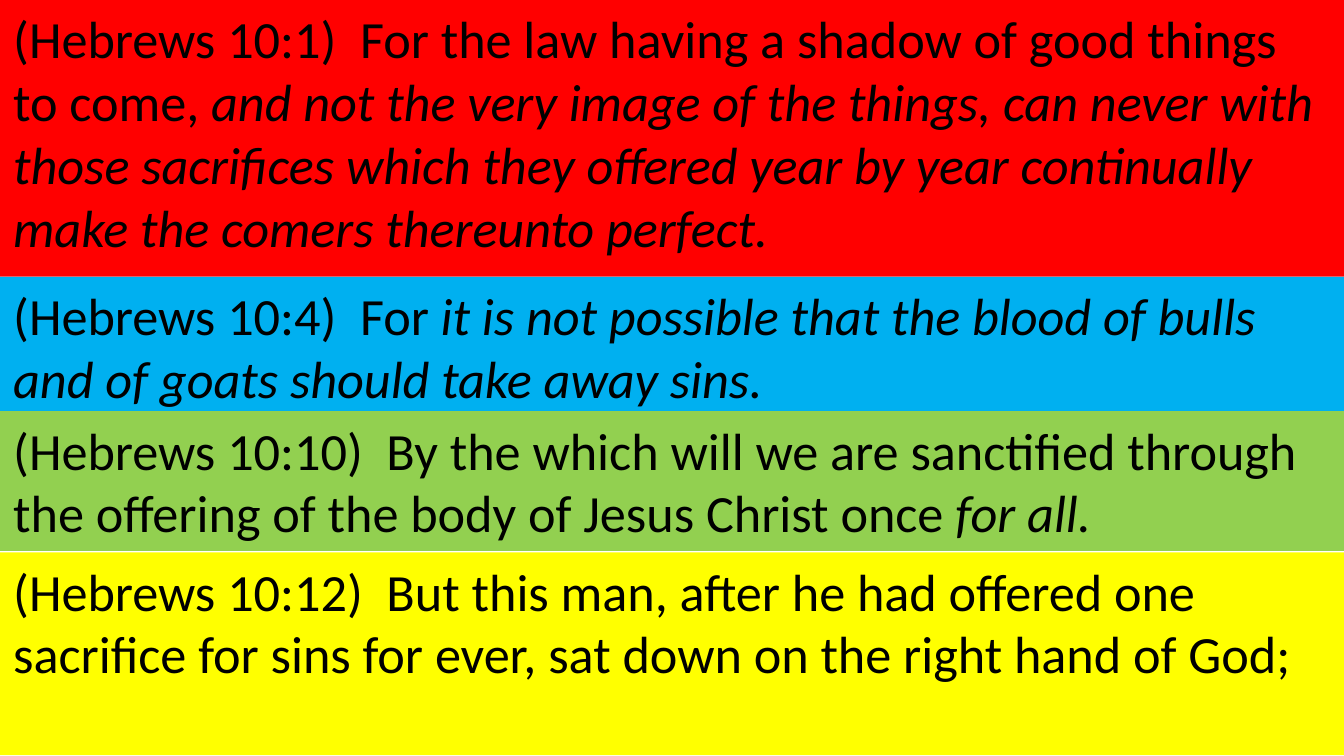
from pptx import Presentation
from pptx.dml.color import RGBColor
from pptx.enum.text import MSO_ANCHOR, MSO_AUTO_SIZE
from pptx.util import Inches, Pt

TOP = MSO_ANCHOR.TOP
NO_RESIZE = MSO_AUTO_SIZE.NONE
BLANK_LAYOUT = 6
SLIDE_WIDTH = 10
SLIDE_HEIGHT = SLIDE_WIDTH * 9 / 16

COLOURS = {
    "red": "FF0000",
    "blue": "00B0F0",
    "green": "92D050",
    "yellow": "FFFF00",
    "text": "000000",
}
FRAME_FORMAT = {"word_wrap": True, "auto_size": NO_RESIZE, "vertical_anchor": TOP}
FONT_FORMAT = {"name": "Calibri", "size": Pt(28)}

# Each verse: top, height, band colour, upright words, italic words
VERSES = [
    (0, 2.06, "red",
     "(Hebrews 10:1)  For the law having a shadow of good things to come, ",
     "and not the very image of the things, can never with those sacrifices "
     "which they offered year by year continually make the comers thereunto perfect."),
    (2.06, 1.04, "blue",
     "(Hebrews 10:4)  For ",
     "it is not possible that the blood of bulls and of goats should take away sins."),
    (3.06, 1.04, "green",
     "(Hebrews 10:10)  By the which will we are sanctified through the offering "
     "of the body of Jesus Christ once ",
     "for all."),
    (4.11, 1.51, "yellow",
     "(Hebrews 10:12)  But this man, after he had offered one sacrifice for sins "
     "for ever, sat down on the right hand of God;",
     ""),
]


def colour(name):
    return RGBColor.from_string(COLOURS[name])


def apply_format(target, values):
    for name, value in values.items():
        setattr(target, name, value)


def add_span(para, text, italic):
    span = para.add_run()
    span.text = text
    apply_format(span.font, {**FONT_FORMAT, "italic": italic})
    span.font.color.rgb = colour("text")


def add_verse(page, top, height, band, upright, italic):
    box = page.shapes.add_textbox(
        Inches(0), Inches(top), Inches(SLIDE_WIDTH), Inches(height))
    box.fill.solid()
    box.fill.fore_color.rgb = colour(band)
    apply_format(box.text_frame, FRAME_FORMAT)
    para = box.text_frame.paragraphs[0]
    add_span(para, upright, False)
    if italic:
        add_span(para, italic, True)


def main():
    deck = Presentation()
    deck.slide_width = Inches(SLIDE_WIDTH)
    deck.slide_height = Inches(SLIDE_HEIGHT)
    page = deck.slides.add_slide(deck.slide_layouts[BLANK_LAYOUT])

    # Verse bands, from top to bottom
    for verse in VERSES:
        add_verse(page, *verse)

    deck.save("out.pptx")


if __name__ == "__main__":
    main()
